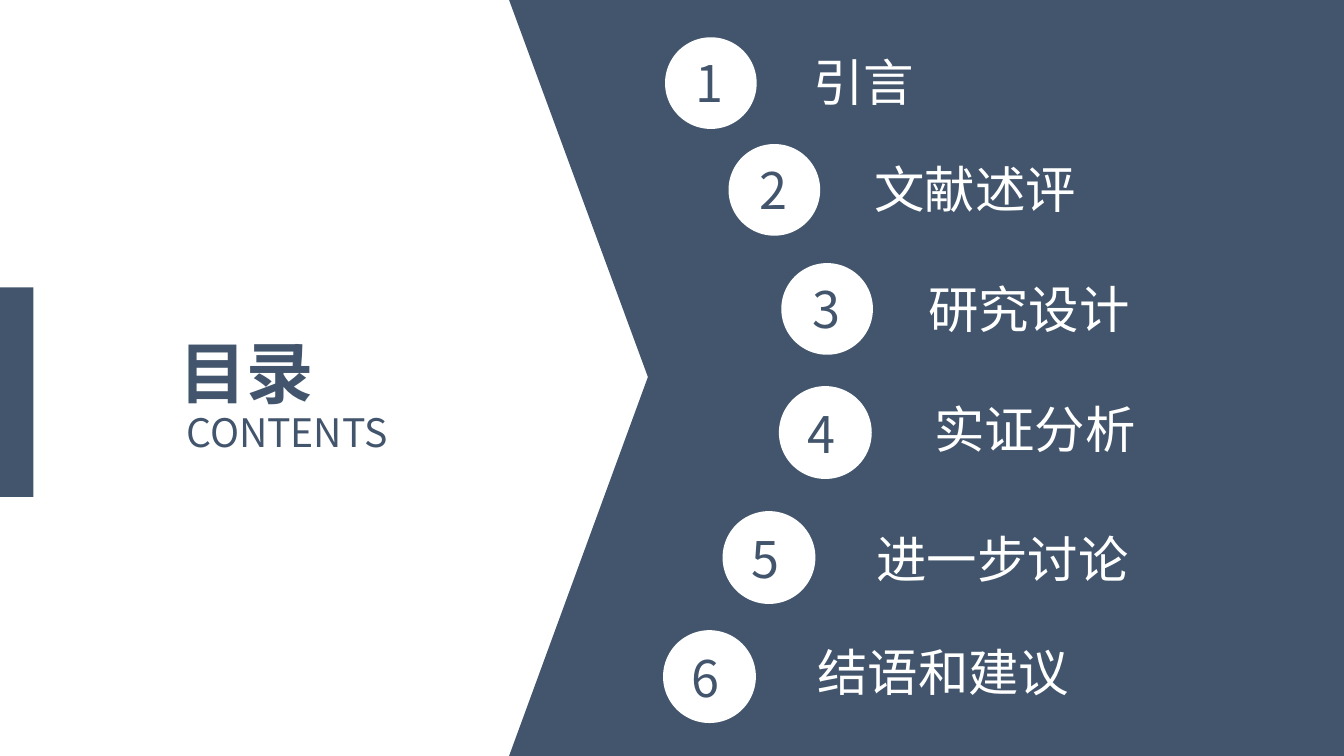
from lxml import etree
from pptx import Presentation
from pptx.dml.color import RGBColor
from pptx.enum import shapes, text
from pptx.oxml import ns
from pptx.util import Cm, Pt

NAVY, WHITE = "42556C", "FFFFFF"
FONT = "Noto Sans CJK SC"
WIDTH, HEIGHT = 33.87, 19.05

# Label, circle left and top, circle size, label left and top, number offset
UPPER = 2.31, (0.53, 0.25)
LOWER = 2.34, (0.48, 0.31)
CHAPTERS = [
    ("引言", (16.76, 0.94), (20.24, 1.17), UPPER),
    ("文献述评", (18.36, 3.63), (21.79, 3.86), UPPER),
    ("研究设计", (19.69, 6.63), (23.14, 6.88), UPPER),
    ("实证分析", (19.63, 9.73), (23.29, 9.91), LOWER),
    ("进一步讨论", (18.21, 12.88), (21.84, 13.18), LOWER),
    ("结语和建议", (16.71, 15.88), (20.35, 16.03), LOWER),
]


def paint(sp, color):
    sp.shadow.inherit = False
    sp.fill.solid()
    sp.fill.fore_color.rgb = RGBColor.from_string(color)
    sp.line.fill.background()


def add_shape(parent, kind, x, y, w, h, color):
    sp = parent.add_shape(kind, Cm(x), Cm(y), Cm(w), Cm(h))
    paint(sp, color)


def add_polygon(parent, points, color):
    start, *rest = [(Cm(x), Cm(y)) for x, y in points]
    builder = parent.build_freeform(*start)
    builder.add_line_segments(rest)
    paint(builder.convert_to_shape(), color)


def add_text(parent, words, x, y, w, h, size, color, bold=False, wrap=False, align=None):
    tf = parent.add_textbox(Cm(x), Cm(y), Cm(w), Cm(h)).text_frame
    tf.word_wrap = wrap
    tf.auto_size = text.MSO_AUTO_SIZE.SHAPE_TO_FIT_TEXT
    p = tf.paragraphs[0]
    p.text = words
    p.alignment = align
    font = p.font
    font.size, font.bold, font.name = Pt(size), bold, FONT
    font.color.rgb = RGBColor.from_string(color)
    props = p._p.pPr.find(ns.qn("a:defRPr"))
    etree.SubElement(props, ns.qn("a:ea")).set("typeface", FONT)


def add_chapter(s, number, label, circle, label_at, style):
    """Add one group of a circle, its number and the chapter label."""
    size, (dx, dy) = style
    x, y = circle
    group = s.shapes.add_group_shape().shapes
    add_shape(group, shapes.MSO_SHAPE.OVAL, x, y, size, size, WHITE)
    add_text(group, label, *label_at, 1.27 * len(label) + 0.54, 1.8, 36, WHITE)
    add_text(group, str(number), x + dx, y + dy, 1.3, 1.8, 36, NAVY)


def main():
    prs = Presentation()
    prs.slide_width, prs.slide_height = Cm(WIDTH), Cm(HEIGHT)
    s = prs.slides.add_slide(prs.slide_layouts[6])

    panel = [(12.83, 0), (WIDTH, 0), (WIDTH, HEIGHT), (12.83, HEIGHT), (16.33, 9.5)]
    add_polygon(s.shapes, panel, NAVY)
    add_shape(s.shapes, shapes.MSO_SHAPE.RECTANGLE, 0, 7.24, 0.84, 5.28, NAVY)

    justify = text.PP_ALIGN.JUSTIFY
    add_text(s.shapes, "目录", 4.27, 8.23, 7.09, 2.31, 48, NAVY, True, True, justify)
    add_text(s.shapes, "CONTENTS", 4.45, 10.16, 6.76, 1.45, 28, NAVY, False, True, justify)

    for number, chapter in enumerate(CHAPTERS, 1):
        add_chapter(s, number, *chapter)
    prs.save("out.pptx")


if __name__ == "__main__":
    main()
